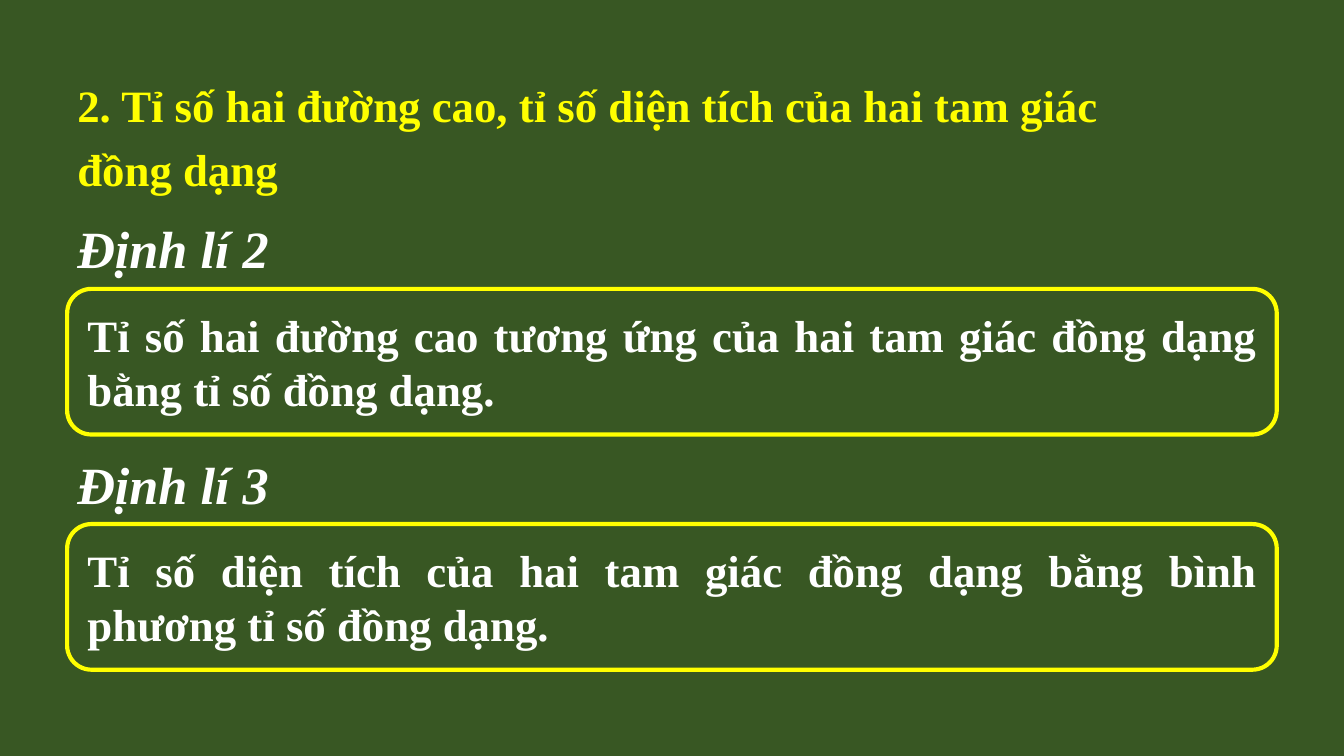
from dataclasses import dataclass

from pptx import Presentation
from pptx.dml.color import RGBColor
from pptx.enum.shapes import MSO_SHAPE
from pptx.enum.text import MSO_ANCHOR, MSO_AUTO_SIZE, PP_ALIGN
from pptx.slide import Slide
from pptx.text.text import TextFrame
from pptx.util import Pt


@dataclass(frozen=True)
class Theme:
    back: RGBColor = RGBColor(0x38, 0x57, 0x23)
    accent: RGBColor = RGBColor(0xFF, 0xFF, 0x00)
    ink: RGBColor = RGBColor(0xFF, 0xFF, 0xFF)
    font: str = "Times New Roman"
    body: float = 24
    label: float = 28
    border: float = 2.25


@dataclass(frozen=True)
class Theorem:
    name: str
    claim: str


THEME = Theme()
LEFT, WIDE, NARROW = 36, 648, 558
TOP, STEP = 106.6, 126
LABEL_H, BOX_H, BOX_DROP = 46, 78, 48.2

HEADING = "2. Tỉ số hai đường cao, tỉ số diện tích của hai tam giác đồng dạng"
THEOREMS = [
    Theorem("Định lí 2", "Tỉ số hai đường cao tương ứng của hai tam giác "
                         "đồng dạng bằng tỉ số đồng dạng."),
    Theorem("Định lí 3", "Tỉ số diện tích của hai tam giác đồng dạng bằng "
                         "bình phương tỉ số đồng dạng."),
]


def write(frame: TextFrame, text: str, size: float, color: RGBColor,
          align: PP_ALIGN, italic: bool = False) -> None:
    frame.text = text
    frame.word_wrap = True
    line = frame.paragraphs[0]
    line.alignment = align
    font = line.runs[0].font
    font.name, font.size = THEME.font, Pt(size)
    font.bold, font.italic = True, italic
    font.color.rgb = color


def loosen(frame: TextFrame) -> None:
    """Give a heading its small insets, top anchor and open line spacing."""
    frame.margin_left = frame.margin_right = Pt(5.4)
    frame.margin_top = frame.margin_bottom = Pt(2.7)
    frame.vertical_anchor = MSO_ANCHOR.TOP
    frame.auto_size = MSO_AUTO_SIZE.SHAPE_TO_FIT_TEXT
    frame.paragraphs[0].line_spacing = 1.2


def add_title(slide: Slide) -> None:
    title = slide.shapes.title
    title.left, title.top = Pt(LEFT), Pt(33)
    title.width, title.height = Pt(NARROW), Pt(75.6)
    write(title.text_frame, HEADING, THEME.body, THEME.accent, PP_ALIGN.LEFT)
    loosen(title.text_frame)


def add_theorem(slide: Slide, item: Theorem, top: float) -> None:
    label = slide.shapes.add_textbox(Pt(LEFT), Pt(top), Pt(NARROW), Pt(LABEL_H))
    write(label.text_frame, item.name, THEME.label, THEME.ink, PP_ALIGN.LEFT,
          italic=True)
    loosen(label.text_frame)

    box = slide.shapes.add_shape(MSO_SHAPE.ROUNDED_RECTANGLE, Pt(LEFT),
                                 Pt(top + BOX_DROP), Pt(WIDE), Pt(BOX_H))
    box.shadow.inherit = False
    box.fill.background()
    box.line.color.rgb = THEME.accent
    box.line.width = Pt(THEME.border)
    box.text_frame.vertical_anchor = MSO_ANCHOR.MIDDLE
    write(box.text_frame, item.claim, THEME.body, THEME.ink, PP_ALIGN.JUSTIFY)


def main() -> None:
    deck = Presentation()
    deck.slide_width, deck.slide_height = Pt(720), Pt(405)
    slide = deck.slides.add_slide(deck.slide_layouts.get_by_name("Title Only"))
    slide.background.fill.solid()
    slide.background.fill.fore_color.rgb = THEME.back
    add_title(slide)
    for row, item in enumerate(THEOREMS):
        add_theorem(slide, item, TOP + row * STEP)
    deck.save("out.pptx")


if __name__ == "__main__":
    main()
